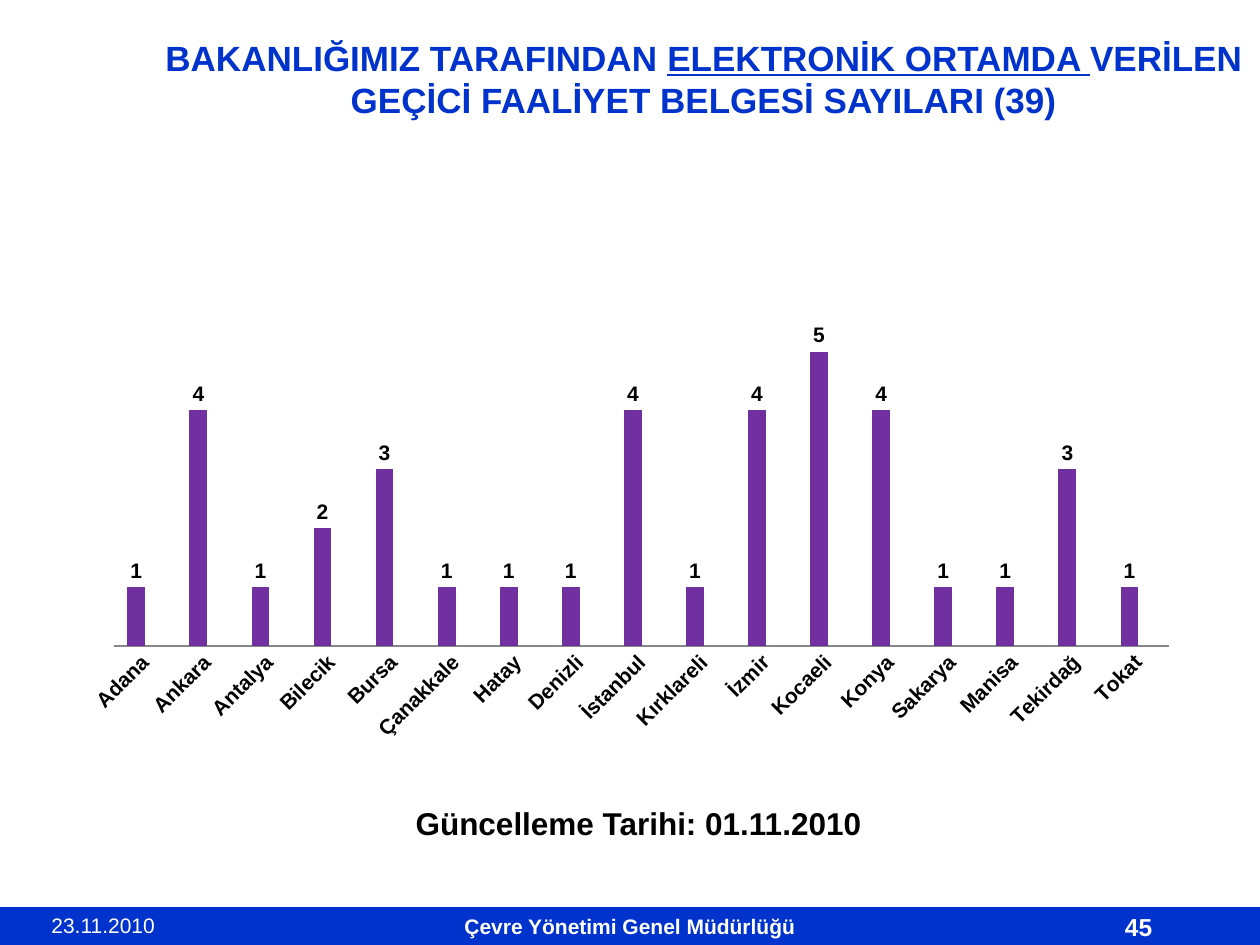
from lxml import etree
from pptx import Presentation
from pptx import util as u
from pptx.chart.data import CategoryChartData
from pptx.dml.color import RGBColor
from pptx.enum import chart as ch
from pptx.enum import shapes, text
from pptx.oxml import parse_xml
from pptx.oxml.ns import nsdecls

FONT = "Arial"
BLUE, WHITE, BLACK, PURPLE, INDIGO = "0033CC", "FFFFFF", "000000", "7030A0", "333399"
PERMITS = {
    "Adana": 1, "Ankara": 4, "Antalya": 1, "Bilecik": 2, "Bursa": 3,
    "Çanakkale": 1, "Hatay": 1, "Denizli": 1, "İstanbul": 4, "Kırklareli": 1,
    "İzmir": 4, "Kocaeli": 5, "Konya": 4, "Sakarya": 1, "Manisa": 1,
    "Tekirdağ": 3, "Tokat": 1,
}


def rgb(value):
    return RGBColor.from_string(value)


def inches(*values):
    return [u.Inches(v) for v in values]


def style(font, size, color, bold=False):
    font.name, font.size, font.bold = FONT, u.Pt(size), bold
    font.color.rgb = rgb(color)


def add_text(s, box, words, size, color, bold=False):
    tf = s.shapes.add_textbox(*inches(*box)).text_frame
    tf.word_wrap = True
    tf.text = words
    style(tf.paragraphs[0].runs[0].font, size, color, bold)


def add_footer_bar(s, words):
    sp = s.shapes.add_shape(shapes.MSO_SHAPE.RECTANGLE, *inches(0, 7.2, 10, 0.3))
    sp.shadow.inherit = False
    sp.fill.solid()
    sp.fill.fore_color.rgb = rgb(BLUE)
    sp.line.fill.background()
    tf = sp.text_frame
    tf.text = words
    tf.vertical_anchor = text.MSO_ANCHOR.MIDDLE
    p = tf.paragraphs[0]
    p.alignment = text.PP_ALIGN.CENTER
    style(p.runs[0].font, 12, WHITE, True)


def set_title(s, parts):
    sp = s.shapes.title
    sp.left, sp.top, sp.width, sp.height = inches(1.17, 0.23, 8.83, 0.78)
    tf = sp.text_frame
    tf.word_wrap = True
    tf.auto_size = text.MSO_AUTO_SIZE.NONE
    tf.vertical_anchor = text.MSO_ANCHOR.MIDDLE
    p = tf.paragraphs[0]
    p.alignment = text.PP_ALIGN.CENTER
    for words, underline in parts:
        r = p.add_run()
        r.text = words
        style(r.font, 20, BLUE, True)
        r.font.underline = underline


def set_plot_area(chart, x, y, w, h):
    """Fix the inner plot area, in fractions of the chart."""
    area = chart.plots._plotArea
    for old in area.findall("{*}layout"):
        area.remove(old)
    sizes = "".join(f'<c:{k} val="{v}"/>' for k, v in zip("xywh", (x, y, w, h)))
    area.insert(0, parse_xml(
        f'<c:layout {nsdecls("c")}><c:manualLayout><c:layoutTarget val="inner"/>'
        f'<c:xMode val="edge"/><c:yMode val="edge"/>{sizes}'
        '</c:manualLayout></c:layout>'))


def add_permit_chart(s):
    data = CategoryChartData()
    data.categories = list(PERMITS)
    data.add_series("Series 1", list(PERMITS.values()))
    data.add_series("Series 2", [None] * len(PERMITS))
    chart = s.shapes.add_chart(ch.XL_CHART_TYPE.COLUMN_CLUSTERED,
                               *inches(0.55, 2.25, 8.91, 3.69), data).chart
    chart.has_legend = chart.has_title = False
    style(chart.font, 10, BLACK)
    set_plot_area(chart, 0.04, 0.02, 0.94, 0.76)

    # Columns and their values
    plot = chart.plots[0]
    plot.vary_by_categories = False
    plot.gap_width, plot.overlap = 150, 0
    for series, color in zip(plot.series, (PURPLE, INDIGO)):
        series.format.fill.solid()
        series.format.fill.fore_color.rgb = rgb(color)
        labels = series.data_labels
        labels.show_value = True
        labels.position = ch.XL_LABEL_POSITION.OUTSIDE_END
        style(labels.font, 12, BLACK, True)

    # Axes
    value = chart.value_axis
    value.minimum_scale, value.maximum_scale = 0, 6
    value.has_major_gridlines = False
    value.visible = False
    cat = chart.category_axis
    cat.major_tick_mark = ch.XL_TICK_MARK.NONE
    cat.format.line.color.rgb = rgb("868686")
    cat.format.line.width = u.Pt(0.75)
    style(cat.tick_labels.font, 12, BLACK, True)
    cat._element.txPr.bodyPr.set("rot", str(-45 * 60000))


def main():
    prs = Presentation()
    prs.slide_width, prs.slide_height = inches(10, 7.5)
    s = prs.slides.add_slide(prs.slide_layouts[5])

    # Footer
    add_footer_bar(s, "Çevre Yönetimi Genel Müdürlüğü")
    add_text(s, (8.83, 7.19, 0.78, 0.31), "45", 14, WHITE, True)
    add_text(s, (0.31, 7.19, 2.19, 0.31), "23.11.2010", 12, WHITE)

    # Heading, chart and update date
    set_title(s, [("BAKANLIĞIMIZ TARAFINDAN ", False),
                  ("ELEKTRONİK ORTAMDA ", True),
                  ("VERİLEN GEÇİCİ FAALİYET BELGESİ SAYILARI (39)", False)])
    add_permit_chart(s)
    add_text(s, (3.2, 6.33, 3.98, 0.4), "Güncelleme Tarihi: 01.11.2010", 18, BLACK, True)
    prs.save("out.pptx")


if __name__ == "__main__":
    main()
